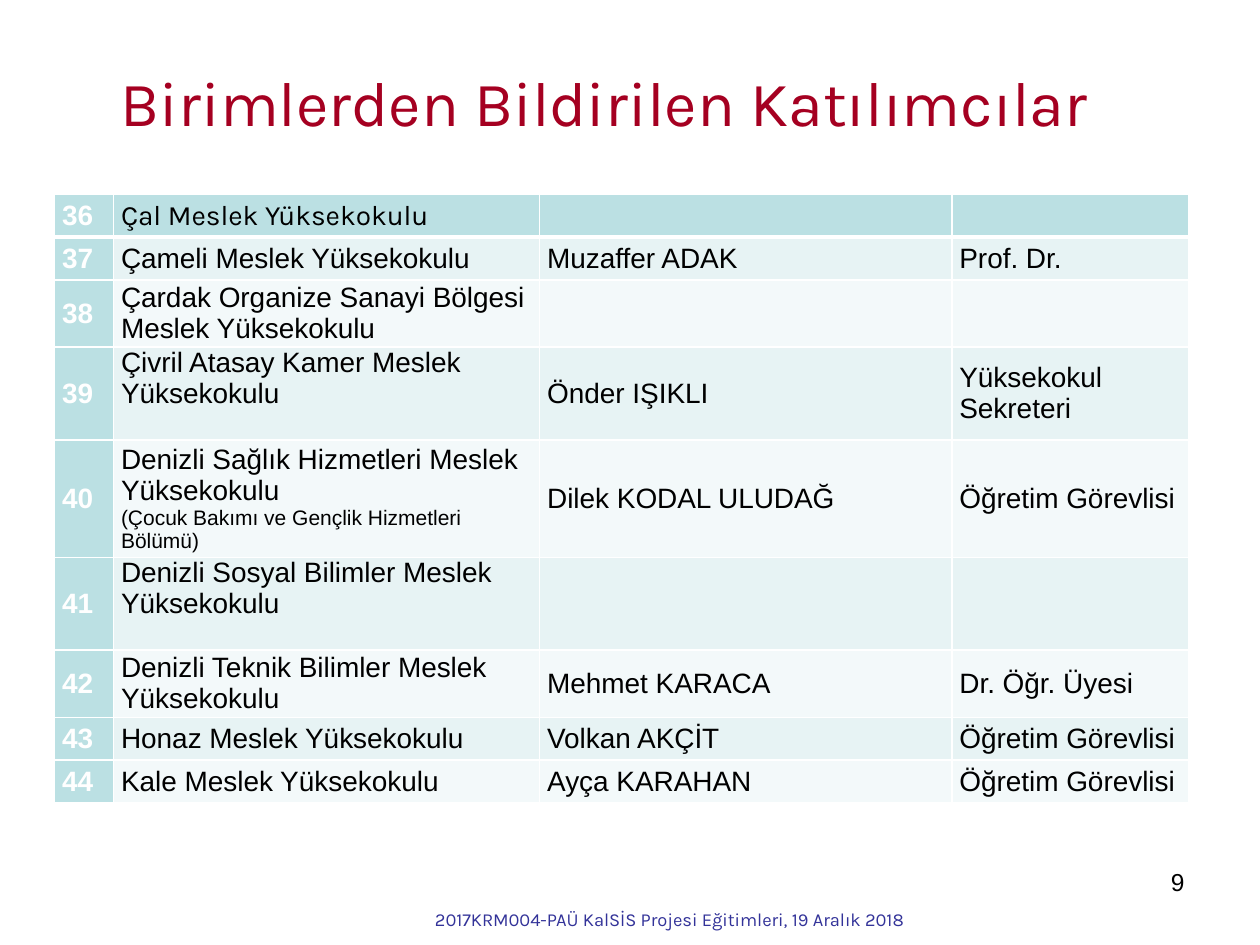
from lxml import etree
from pptx import Presentation
from pptx.dml.color import RGBColor
from pptx.enum.text import MSO_ANCHOR, PP_ALIGN
from pptx.oxml.ns import qn
from pptx.util import Cm, Pt

TOP, MIDDLE = MSO_ANCHOR.TOP, MSO_ANCHOR.MIDDLE
LEFT, CENTER, RIGHT = PP_ALIGN.LEFT, PP_ALIGN.CENTER, PP_ALIGN.RIGHT
TITLE_ONLY = 5

WHITE, BLACK = "FFFFFF", "000000"
HEADER_FILL, BAND_FILLS = "BBE0E3", ("F3F9FA", "E7F3F4")
COLUMN_WIDTHS = (1.19, 8.59, 8.31, 4.78)
ONE_LINE, TWO_LINES, THREE_LINES, FOUR_LINES = 0.86, 1.25, 1.87, 2.22

FIRST_NUMBER = 36
# Unit, participant, position, row height in cm, anchor of the unit
PARTICIPANTS = [
    ("Çal Meslek Yüksekokulu", "", "", ONE_LINE, MIDDLE),
    ("Çameli Meslek Yüksekokulu", "Muzaffer ADAK", "Prof. Dr.", ONE_LINE, MIDDLE),
    ("Çardak Organize Sanayi Bölgesi Meslek Yüksekokulu", "", "", TWO_LINES, MIDDLE),
    ("Çivril Atasay Kamer Meslek Yüksekokulu", "Önder IŞIKLI",
     "Yüksekokul Sekreteri", THREE_LINES, TOP),
    ("Denizli Sağlık Hizmetleri Meslek Yüksekokulu", "Dilek KODAL ULUDAĞ",
     "Öğretim Görevlisi", FOUR_LINES, MIDDLE),
    ("Denizli Sosyal Bilimler Meslek Yüksekokulu", "", "", THREE_LINES, TOP),
    ("Denizli Teknik Bilimler Meslek Yüksekokulu", "Mehmet KARACA",
     "Dr. Öğr. Üyesi", TWO_LINES, MIDDLE),
    ("Honaz Meslek Yüksekokulu", "Volkan AKÇİT", "Öğretim Görevlisi", ONE_LINE, MIDDLE),
    ("Kale Meslek Yüksekokulu", "Ayça KARAHAN", "Öğretim Görevlisi", ONE_LINE, MIDDLE),
]
DEPARTMENT_NOTES = {40: "(Çocuk Bakımı ve Gençlik Hizmetleri Bölümü)"}


def color(hex_code):
    return RGBColor.from_string(hex_code)


def write(paragraph, text, *, size=16, font="Arial", fill=BLACK, bold=False, align=LEFT):
    paragraph.alignment = align
    run = paragraph.add_run()
    run.text = text
    run.font.size = Pt(size)
    run.font.name = font
    run.font.bold = bold
    run.font.color.rgb = color(fill)


def place(shape, left, top, width, height):
    shape.left, shape.top = Cm(left), Cm(top)
    shape.width, shape.height = Cm(width), Cm(height)


def add_title(slide, text):
    title = slide.shapes.title
    place(title, 0.23, 0.74, 23.9, 2.21)
    frame = title.text_frame
    frame.vertical_anchor = TOP
    frame.margin_top = Cm(0.55)
    write(frame.paragraphs[0], text, size=36, font="Karla", fill="A50021", align=CENTER)


def add_label(slide, text, left, top, width, height, **text_format):
    label = slide.shapes.add_textbox(Cm(left), Cm(top), Cm(width), Cm(height))
    label.text_frame.word_wrap = True
    write(label.text_frame.paragraphs[0], text, **text_format)


def set_borders(cell, top=1, bottom=1):
    properties = cell._tc.get_or_add_tcPr()
    for side, points in (("L", 1), ("R", 1), ("T", top), ("B", bottom)):
        line = etree.SubElement(properties, qn(f"a:ln{side}"), w=str(Pt(points)))
        solid = etree.SubElement(line, qn("a:solidFill"))
        etree.SubElement(solid, qn("a:srgbClr"), val=WHITE)


def format_cell(cell, fill, anchor, **borders):
    set_borders(cell, **borders)
    cell.fill.solid()
    cell.fill.fore_color.rgb = color(fill)
    cell.vertical_anchor = anchor
    cell.margin_left = cell.margin_right = Cm(0.15)
    cell.margin_top = cell.margin_bottom = 0


def add_participant_table(slide):
    heights = [participant[3] for participant in PARTICIPANTS]
    table = slide.shapes.add_table(
        len(PARTICIPANTS), len(COLUMN_WIDTHS),
        Cm(1.1), Cm(3.92), Cm(sum(COLUMN_WIDTHS)), Cm(sum(heights))).table
    for column, width in zip(table.columns, COLUMN_WIDTHS):
        column.width = Cm(width)

    for row, (unit, person, position, height, unit_anchor) in enumerate(PARTICIPANTS):
        table.rows[row].height = Cm(height)
        number = FIRST_NUMBER + row
        # A thick rule separates the first row from the rest
        borders = {0: {"bottom": 3}, 1: {"top": 3}}.get(row, {})
        for col, text in enumerate((str(number), unit, person, position)):
            cell = table.cell(row, col)
            is_number, is_unit = col == 0, col == 1
            fill = HEADER_FILL if row == 0 or is_number else BAND_FILLS[row % 2]
            format_cell(cell, fill, unit_anchor if is_unit else MIDDLE, **borders)
            if text:
                write(cell.text_frame.paragraphs[0], text, bold=is_number,
                      fill=WHITE if is_number else BLACK,
                      font="Karla" if row == 0 and is_unit else "Arial")
            if is_unit and number in DEPARTMENT_NOTES:
                write(cell.text_frame.add_paragraph(), DEPARTMENT_NOTES[number], size=12)


def main():
    presentation = Presentation()
    presentation.slide_width, presentation.slide_height = Cm(25.4), Cm(19.05)
    slide = presentation.slides.add_slide(presentation.slide_layouts[TITLE_ONLY])

    # Page number and footer
    add_label(slide, "9", 18.21, 17.35, 5.92, 1.32, size=14, align=RIGHT)
    add_label(slide, "2017KRM004-PAÜ KalSİS Projesi Eğitimleri, 19 Aralık 2018",
              7.29, 18.19, 12.42, 0.58, size=10.5, font="Karla", fill="333399", align=CENTER)

    # Heading and participant list
    add_title(slide, "Birimlerden Bildirilen Katılımcılar")
    add_participant_table(slide)

    presentation.save("out.pptx")


if __name__ == "__main__":
    main()
